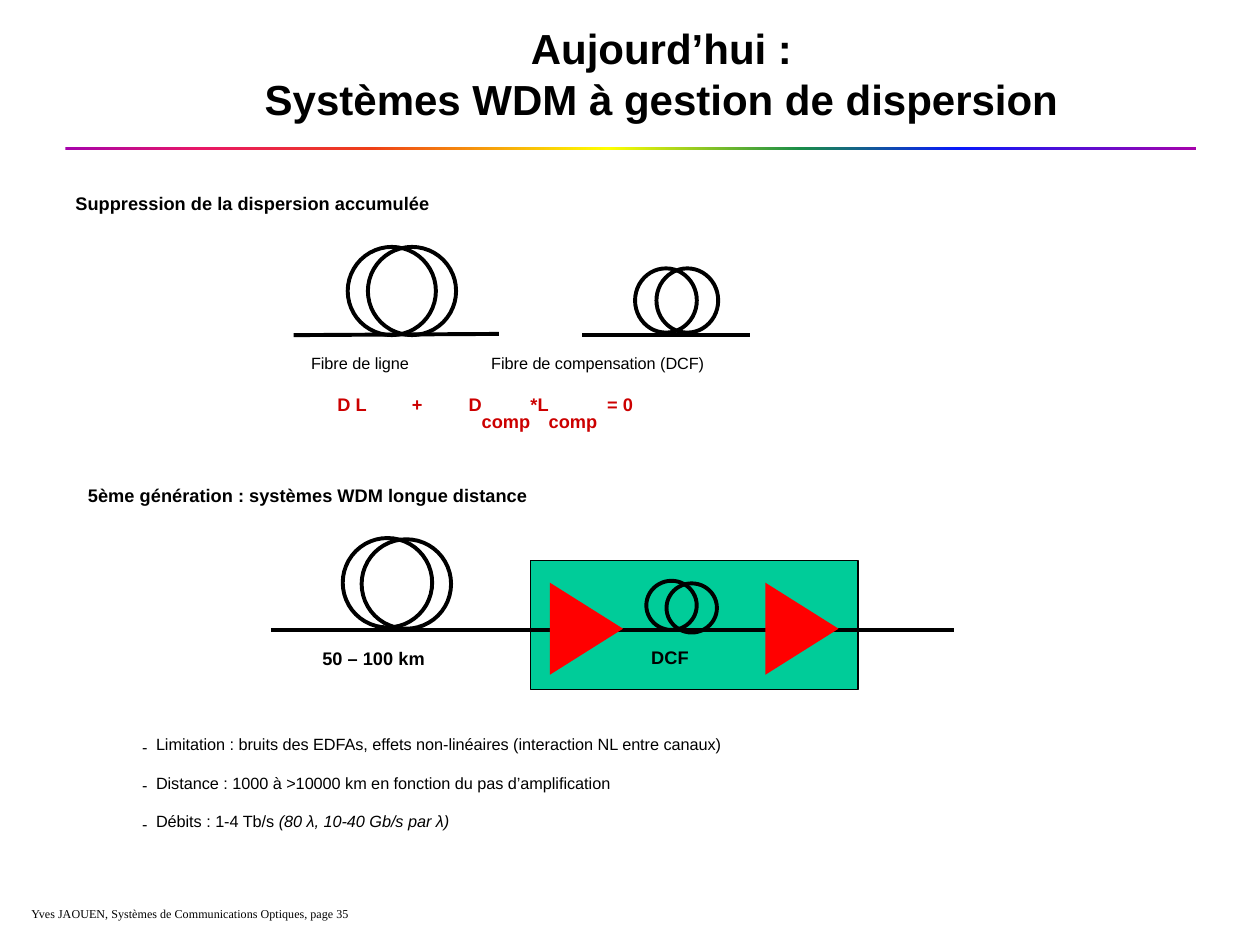
from lxml.etree import SubElement
from pptx import Presentation
from pptx.dml.color import RGBColor
from pptx.enum.shapes import MSO_CONNECTOR, MSO_SHAPE
from pptx.enum.text import MSO_ANCHOR, PP_ALIGN
from pptx.oxml.ns import qn
from pptx.util import Inches, Pt

COLORS = {"ink": "000000", "box": "00CC99", "amp": "FF0000", "formula": "CC0000"}
RAINBOW = [(0, "A603AB"), (12, "E81766"), (27, "EE3F17"), (48, "FFFF00"),
           (65, "1A8D48"), (79, "0819FB"), (100, "A603AB")]
RAISED, LOWERED = 30, -25  # baseline shifts in percent


def rgb(name):
    return RGBColor.from_string(COLORS[name])


def shape(slide, kind, at, fill=None, line=None):
    item = slide.shapes.add_shape(kind, *map(Inches, at))
    item.shadow.inherit = False
    if fill:
        item.fill.solid()
        item.fill.fore_color.rgb = rgb(fill)
    else:
        item.fill.background()
    if line:
        item.line.color.rgb = rgb("ink")
        item.line.width = Pt(line)
    else:
        item.line.fill.background()
    return item


def wire(slide, *ends):
    line = slide.shapes.add_connector(MSO_CONNECTOR.STRAIGHT, *map(Inches, ends))
    line.line.color.rgb = rgb("ink")
    line.line.width = Pt(2.25)
    SubElement(line._element.spPr, qn("a:effectLst"))


def coil(slide, left, top, width, height, dx, dy=0):
    """Two overlapping fibre loops."""
    for i in range(2):
        shape(slide, MSO_SHAPE.OVAL, (left + i * dx, top + i * dy, width, height), line=2.25)


def amp(slide, left):
    shape(slide, MSO_SHAPE.ISOSCELES_TRIANGLE, (left, 4.7, 0.73, 0.58), "amp").rotation = 90


def style(font, size, bold=False, color="ink", name="Arial"):
    font.size = Pt(size)
    font.bold = bold
    font.name = name
    font.color.rgb = rgb(color)


def write(par, text, size, shift=RAISED, slant=False, **look):
    run = par.add_run()
    run.text = text
    style(run.font, size, **look)
    run.font.italic = slant
    run._r.get_or_add_rPr().set("baseline", str(shift * 1000))


def frame(slide, at):
    text = slide.shapes.add_textbox(*map(Inches, at)).text_frame
    text.word_wrap = True
    return text


def label(slide, at, text, size=18, **look):
    write(frame(slide, at).paragraphs[0], text, size, **look)


def equation(slide, at, parts, stops):
    par = frame(slide, at).paragraphs[0]
    items = SubElement(par._p.get_or_add_pPr(), qn("a:tabLst"))
    for stop in stops:
        SubElement(items, qn("a:tab"), pos=str(Inches(stop)), algn="l")
    for text, shift in parts:
        write(par, text, 18, shift, bold=True, color="formula")


def dashes(slide, at, rows):
    """Dash list; each row is a plain text and an italic remark."""
    text = frame(slide, at)
    for i, (plain, remark) in enumerate(rows):
        par = text.paragraphs[0] if i == 0 else text.add_paragraph()
        par.space_before = Pt(3 if i else 0)
        props = par._p.get_or_add_pPr()
        props.set("marL", str(Inches(0.22)))
        props.set("indent", str(-Inches(0.11)))
        SubElement(props, qn("a:buSzPct"), val="58000")
        SubElement(props, qn("a:buFont"), typeface="Arial")
        SubElement(props, qn("a:buChar"), char="-")
        write(par, plain, 16)
        if remark:
            write(par, remark, 16, slant=True)


def rule(slide):
    bar = shape(slide, MSO_SHAPE.RECTANGLE, (0.52, 1.17, 8.97, 0.02))
    bar.fill.gradient()
    bar.fill.gradient_angle = 0
    stops = bar._element.spPr.find(qn("a:gradFill")).find(qn("a:gsLst"))
    for old in list(stops):
        stops.remove(old)
    for pos, color in RAINBOW:
        stop = SubElement(stops, qn("a:gs"), pos=str(pos * 1000))
        SubElement(stop, qn("a:srgbClr"), val=color)


def heading(slide, lines):
    title = slide.shapes.title
    title.left, title.top, title.width, title.height = map(Inches, (1, 0.29, 8.5, 0.58))
    text = title.text_frame
    text.vertical_anchor = MSO_ANCHOR.MIDDLE
    par = text.paragraphs[0]
    par.alignment = PP_ALIGN.CENTER
    for i, line in enumerate(lines):
        if i:
            par.add_line_break()
        run = par.add_run()
        run.text = line
        style(run.font, 24, bold=True)


def main():
    deck = Presentation()
    deck.slide_width, deck.slide_height = Inches(10), Inches(7.5)
    slide = deck.slides.add_slide(deck.slide_layouts[5])

    # Title, rule and footer
    rule(slide)
    label(slide, (0.15, 7.12, 5.09, 0.38),
          "Yves JAOUEN, Systèmes de Communications Optiques, page 35",
          12, name="Times New Roman")
    heading(slide, ["Aujourd’hui :", "Systèmes WDM à gestion de dispersion"])

    # Line fibre and compensating fibre
    label(slide, (0.5, 1.45, 5.05, 0.4), "Suppression de la dispersion accumulée", bold=True)
    wire(slide, 2.33, 2.66, 3.96, 2.65)
    coil(slide, 2.76, 1.96, 0.7, 0.7, 0.16)
    wire(slide, 4.62, 2.66, 5.95, 2.66)
    coil(slide, 5.04, 2.13, 0.49, 0.51, 0.17)
    label(slide, (2.37, 2.73, 1.55, 0.37), "Fibre de ligne", 16)
    label(slide, (3.8, 2.73, 3.38, 0.37), "Fibre de compensation (DCF)", 16)
    equation(slide, (2.58, 3.04, 3.81, 0.4),
             [("D L\t+\tD", RAISED), ("comp", LOWERED), ("*L", RAISED),
              ("comp", LOWERED), ("\t= 0", RAISED)], (0.59, 1.04, 2.14))

    # Long-haul link with amplifiers around the DCF
    label(slide, (0.6, 3.76, 6.1, 0.71),
          "5ème génération : systèmes WDM longue distance", bold=True)
    shape(slide, MSO_SHAPE.RECTANGLE, (4.21, 4.45, 2.6, 1.02), "box", 0.75)
    wire(slide, 2.15, 5, 7.57, 5)
    coil(slide, 2.72, 4.27, 0.71, 0.71, 0.15, 0.01)
    amp(slide, 4.29)
    amp(slide, 6)
    coil(slide, 5.13, 4.61, 0.4, 0.39, 0.16, 0.02)
    label(slide, (2.46, 5.06, 1.6, 0.4), "50 – 100 km", bold=True)
    label(slide, (5.07, 5.05, 0.72, 0.4), "DCF", bold=True)

    # Limits
    dashes(slide, (0.92, 5.75, 8.36, 0.99), [
        ("Limitation : bruits des EDFAs, effets non-linéaires (interaction NL entre canaux)", ""),
        ("Distance : 1000 à >10000 km en fonction du pas d’amplification", ""),
        ("Débits : 1-4 Tb/s ", "(80 λ, 10-40 Gb/s par λ)"),
    ])

    deck.save("out.pptx")


if __name__ == "__main__":
    main()
